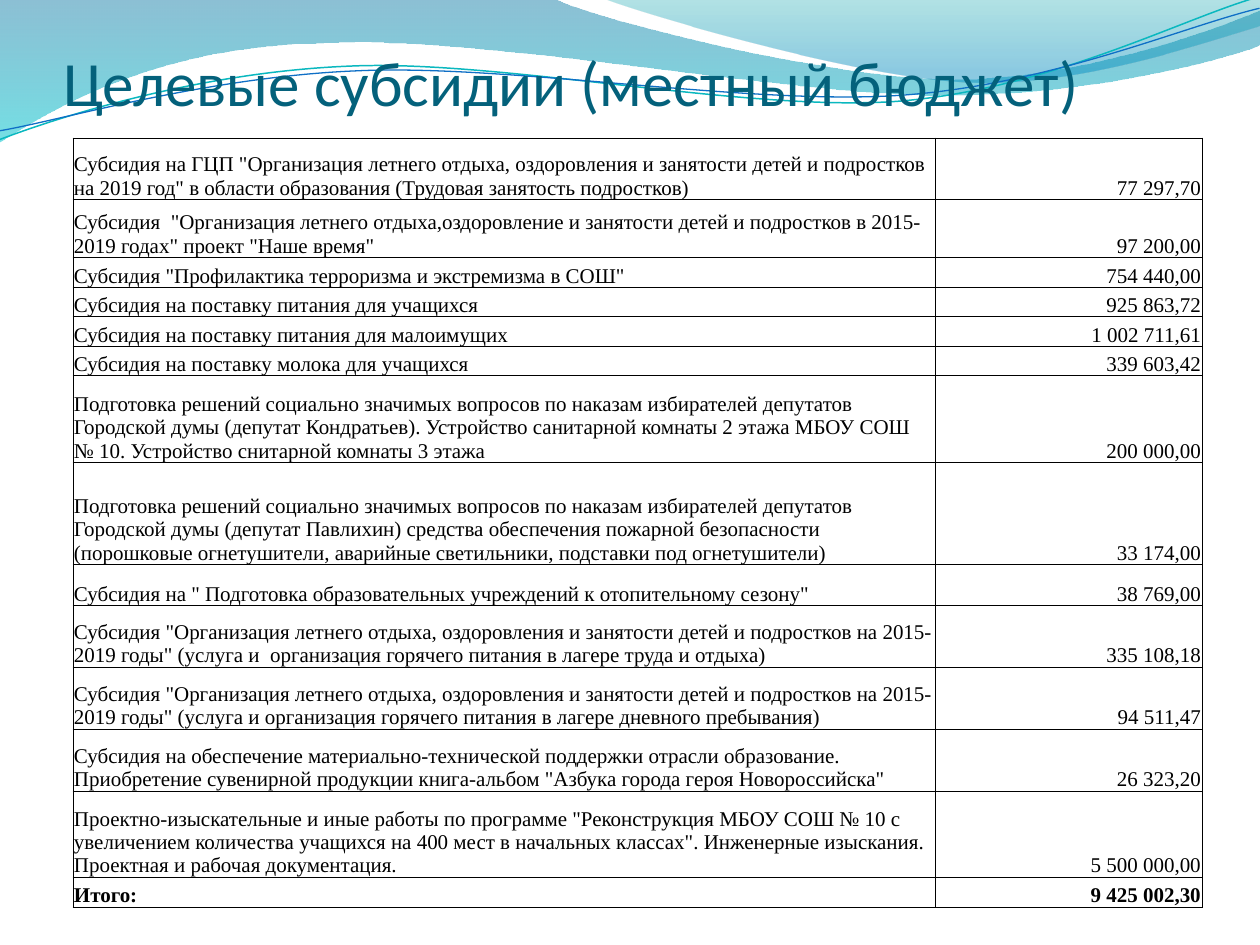
from dataclasses import dataclass
from itertools import chain

from lxml.etree import SubElement
from pptx import Presentation
from pptx.dml.color import RGBColor
from pptx.enum.text import MSO_ANCHOR as Anchor, MSO_AUTO_SIZE as AutoSize, PP_ALIGN as Align
from pptx.oxml.ns import qn
from pptx.util import Emu, Pt

SCALE = 914400 / 126


@dataclass(frozen=True)
class Theme:
    title_font: str = "Calibri"
    body_font: str = "Times New Roman"
    title_size: int = 36
    body_size: int = 12
    spacer_size: int = 8
    border_width: float = 0.5
    title: str = "04617B"
    text: str = "000000"
    border: str = "000000"


THEME = Theme()
NO_STYLE = "{2D5ABB26-0587-4C30-8999-92F81FD0307C}"
LINE_ROTATION = 357.3

# Each path is a start point and steps: one point is a line, three are a curve
# Gradient stops are (position, colour, opacity in percent)
WAVE_FILLS = [
    ([(0, 0), [(554, -1)],
      [(600, 21), (837, 79), (955, 79)], [(1075, 79), (1207, 33), (1260, 11)],
      [(1261, 45)],
      [(1239, 55), (1096, 96), (940, 95)], [(784, 95), (481, 35), (324, 43)],
      [(163, 45), (58, 105), (-1, 142)]],
     [(0, "0074A1", 45), (1, "00C6CF", 55)]),
    ([(604, -1), [(641, 14), (859, 78), (969, 82)],
      [(1079, 87), (1211, 40), (1260, 26)], [(1260, 0)]],
     [(0, "00A1A9", 30), (0.8, "008BBF", 45)]),
]
WAVE_LINES = [
    ([(-3, 110), [(58, 90), (199, 52), (350, 53)],
      [(499, 53), (745, 118), (896, 114)], [(1049, 109), (1184, 45), (1260, 27)]],
     "0AB8BF", 0.85),
    ([(-2, 101), [(57, 94), (207, 57), (357, 58)],
      [(509, 58), (750, 112), (902, 108)], [(1052, 104), (1187, 52), (1262, 38)]],
     "0F6FC6", 0.75),
]

# Height in px, purpose, amount
SUBSIDIES = [
    (62, 'Субсидия на ГЦП "Организация летнего отдыха, оздоровления и занятости детей и подростков на 2019 год" в области образования (Трудовая занятость подростков)', "77 297,70"),
    (58, 'Субсидия  "Организация летнего отдыха,оздоровление и занятости детей и подростков в 2015-2019 годах" проект "Наше время"', "97 200,00"),
    (30, 'Субсидия "Профилактика терроризма и экстремизма в СОШ"', "754 440,00"),
    (29, "Субсидия на поставку питания для учащихся", "925 863,72"),
    (30, "Субсидия на поставку питания для малоимущих", "1 002 711,61"),
    (29, "Субсидия на поставку молока для учащихся", "339 603,42"),
    (87, "Подготовка решений социально значимых вопросов по наказам избирателей депутатов Городской думы (депутат Кондратьев). Устройство санитарной комнаты 2 этажа МБОУ СОШ № 10. Устройство снитарной комнаты 3 этажа", "200 000,00"),
    (102, "Подготовка решений социально значимых вопросов по наказам избирателей депутатов Городской думы (депутат Павлихин) средства обеспечения пожарной безопасности (порошковые огнетушители, аварийные светильники, подставки под огнетушители)", "33 174,00"),
    (41, 'Субсидия на " Подготовка образовательных учреждений к отопительному сезону"', "38 769,00"),
    (62, 'Субсидия "Организация летнего отдыха, оздоровления и занятости детей и подростков на 2015-2019 годы" (услуга и  организация горячего питания в лагере труда и отдыха)', "335 108,18"),
    (62, 'Субсидия "Организация летнего отдыха, оздоровления и занятости детей и подростков на 2015-2019 годы" (услуга и организация горячего питания в лагере дневного пребывания)', "94 511,47"),
    (62, 'Субсидия на обеспечение материально-технической поддержки отрасли образование. Приобретение сувенирной продукции книга-альбом "Азбука города героя Новороссийска"', "26 323,20"),
    (86, 'Проектно-изыскательные и иные работы по программе "Реконструкция МБОУ СОШ № 10 с увеличением количества учащихся на 400 мест в начальных классах". Инженерные изыскания. Проектная и рабочая документация.', "5 500 000,00"),
    (30, "Итого:", "9 425 002,30"),
]


def px(length):
    return Emu(round(length * SCALE))


def color(value):
    return RGBColor.from_string(value)


def add_run(paragraph, text, font, size, value, bold=False):
    run = paragraph.add_run()
    run.text = text
    run.font.name, run.font.size, run.font.bold = font, Pt(size), bold
    run.font.color.rgb = color(value)


def add_outline(slide, outline, box, close):
    left, top = box[:2]
    start, *segments = outline
    builder = slide.shapes.build_freeform(left + start[0], top + start[1], scale=SCALE)
    builder.add_line_segments(
        [(left + x, top + y) for x, y in chain.from_iterable(segments)], close=close)
    shape = builder.convert_to_shape()
    shape.shadow.inherit = False
    # Join each group of three points into one cubic curve
    steps = iter(list(shape.element.iter(qn("a:lnTo"))))
    for segment in segments:
        first, *others = [next(steps) for _ in segment]
        if others:
            first.tag = qn("a:cubicBezTo")
            for other in others:
                first.append(other[0])
                other.getparent().remove(other)
    return shape


def add_waves(slide, box):
    # Translucent bands
    for outline, stops in WAVE_FILLS:
        shape = add_outline(slide, outline, box, True)
        shape.line.fill.background()
        shape.fill.gradient()
        shape.fill.gradient_angle = 270
        for stop, (position, value, _) in zip(shape.fill.gradient_stops, stops):
            stop.position = position
            stop.color.rgb = color(value)
        elements = list(shape.element.iter(qn("a:srgbClr")))
        for element, (_, _, opacity) in zip(elements, stops):
            SubElement(element, qn("a:alpha"), val=str(opacity * 1000))
    # Thin curves
    for outline, value, width in WAVE_LINES:
        shape = add_outline(slide, outline, box, False)
        shape.rotation = LINE_ROTATION
        shape.fill.background()
        shape.line.color.rgb = color(value)
        shape.line.width = Pt(width)


def add_title(slide, text, box):
    title = slide.shapes.title
    title.left, title.top, title.width, title.height = map(px, box)
    slide.shapes.element.append(title.element)  # in front of the waves
    frame = title.text_frame
    frame.auto_size, frame.word_wrap = AutoSize.NONE, True
    frame.vertical_anchor = Anchor.BOTTOM
    frame.margin_left = frame.margin_right = 0
    frame.margin_top, frame.margin_bottom = px(6), px(75)
    paragraph = frame.paragraphs[0]
    paragraph.alignment = Align.LEFT
    add_run(paragraph, text, THEME.title_font, THEME.title_size, THEME.title)


def add_border(cell, side):
    line = SubElement(cell._tc.get_or_add_tcPr(), qn(f"a:ln{side}"),
                      w=str(Pt(THEME.border_width)))
    fill = SubElement(line, qn("a:solidFill"))
    SubElement(fill, qn("a:srgbClr"), val=THEME.border)


def add_subsidy_table(slide, box):
    columns = [73, 862, 267, 33]
    rows = [24, 29, *(height for height, _, _ in SUBSIDIES), 24]
    frame = slide.shapes.add_table(len(rows), len(columns), *map(px, box))
    table = frame.table
    table.first_row = table.horz_banding = False
    next(frame.element.iter(qn("a:tableStyleId"))).text = NO_STYLE
    for column, width in zip(table.columns, columns):
        column.width = px(width)
    for row, height in zip(table.rows, rows):
        row.height = px(height)

    def in_grid(r, c):
        return 2 <= r < len(rows) - 1 and c in (1, 2)

    sides = {"L": (0, -1), "R": (0, 1), "T": (-1, 0), "B": (1, 0)}
    for r in range(len(rows)):
        for c in range(len(columns)):
            cell = table.cell(r, c)
            # A line runs wherever either neighbour belongs to the grid
            for side, (dr, dc) in sides.items():
                if in_grid(r, c) or in_grid(r + dr, c + dc):
                    add_border(cell, side)
            cell.fill.background()
            cell.margin_left = cell.margin_right = cell.margin_top = px(1)
            cell.margin_bottom = 0
            paragraph = cell.text_frame.paragraphs[0]
            if in_grid(r, c):
                cell.vertical_anchor = Anchor.BOTTOM
                paragraph.alignment = Align.RIGHT if c == 2 else Align.LEFT
                add_run(paragraph, SUBSIDIES[r - 2][c], THEME.body_font,
                        THEME.body_size, THEME.text, bold=r == len(rows) - 2)
            else:
                SubElement(paragraph._p, qn("a:endParaRPr"), sz=str(THEME.spacer_size * 100))


def main():
    presentation = Presentation()
    presentation.slide_width, presentation.slide_height = px(1260), px(945)
    slide = presentation.slides.add_slide(presentation.slide_layouts[5])
    add_waves(slide, (0, 0, 1260, 142))
    add_title(slide, "Целевые субсидии (местный бюджет)", (63, 55, 1144, 139))
    add_subsidy_table(slide, (0, 85, 1235, 847))
    presentation.save("out.pptx")


if __name__ == "__main__":
    main()
